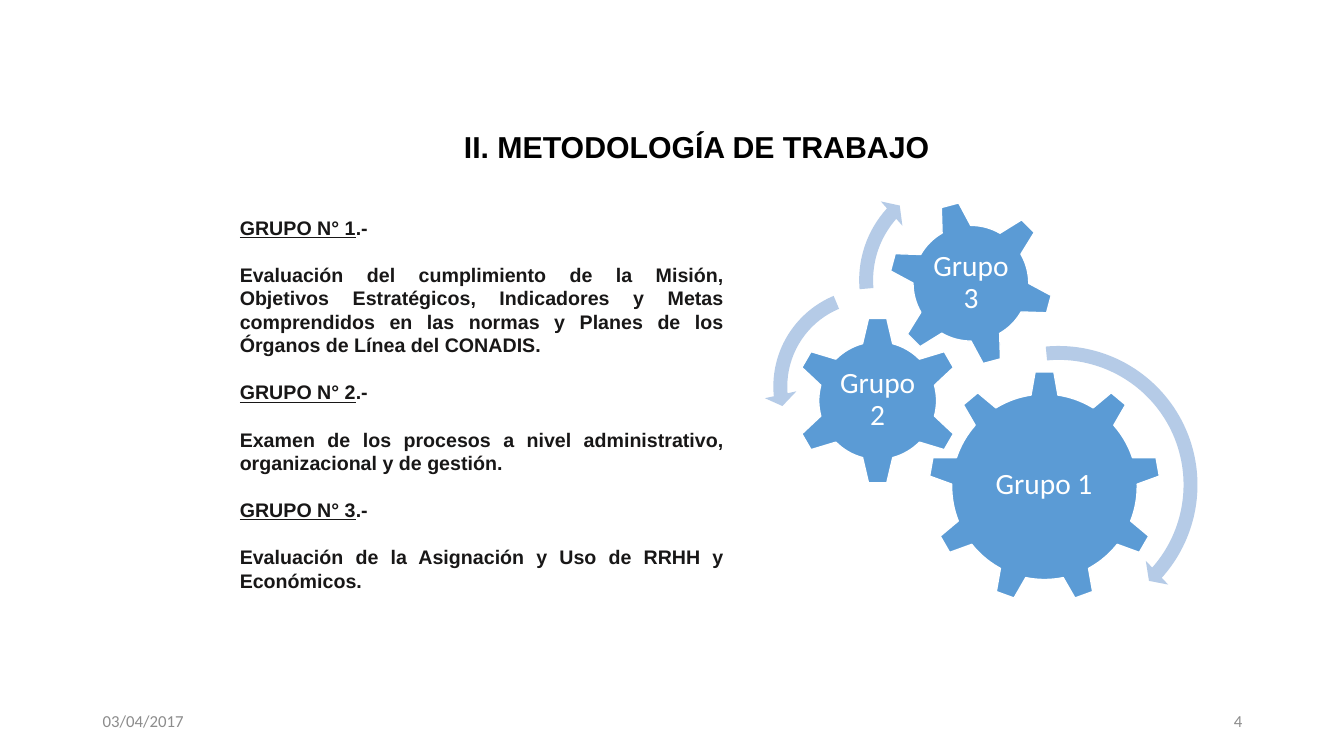
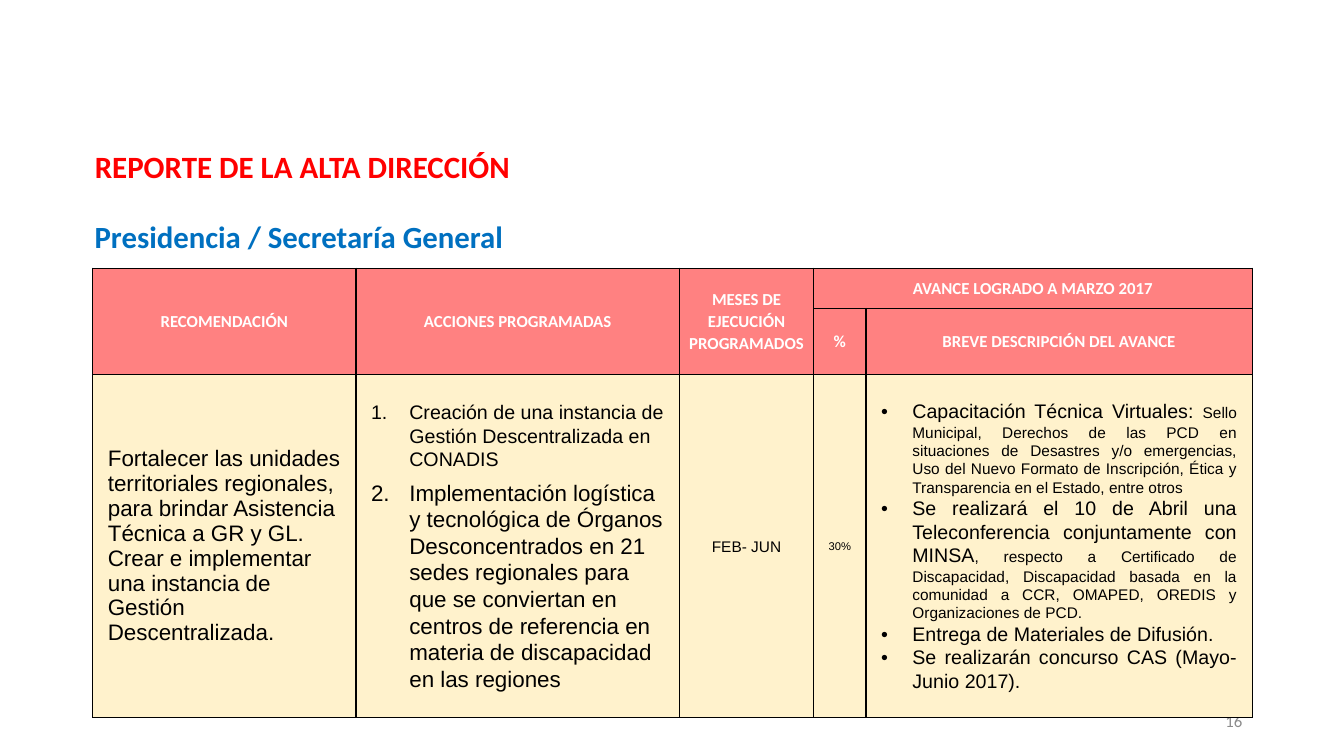
from lxml import etree
from pptx import Presentation
from pptx.dml.color import RGBColor
from pptx.enum.shapes import MSO_SHAPE
from pptx.enum.text import MSO_ANCHOR, MSO_AUTO_SIZE, PP_ALIGN
from pptx.oxml.ns import qn
from pptx.util import Inches, Pt

LEFT, CENTER, RIGHT, JUSTIFY = PP_ALIGN.LEFT, PP_ALIGN.CENTER, PP_ALIGN.RIGHT, PP_ALIGN.JUSTIFY
TOP, MIDDLE = MSO_ANCHOR.TOP, MSO_ANCHOR.MIDDLE
GEAR_6, GEAR_9 = MSO_SHAPE.GEAR_6, MSO_SHAPE.GEAR_9
CLOCKWISE, COUNTERCLOCKWISE = MSO_SHAPE.CIRCULAR_ARROW, MSO_SHAPE.LEFT_CIRCULAR_ARROW

BLACK = RGBColor(0x00, 0x00, 0x00)
WHITE = RGBColor(0xFF, 0xFF, 0xFF)
INK = RGBColor(0x18, 0x17, 0x17)
GRAY = RGBColor(0x8C, 0x8C, 0x8C)
RED = RGBColor(0xFF, 0x00, 0x00)
BLUE = RGBColor(0x00, 0x70, 0xC0)
GEAR_BLUE = RGBColor(0x5B, 0x9B, 0xD5)
ARROW_BLUE = RGBColor(0xB5, 0xCB, 0xE7)
HEADER_PINK = RGBColor(0xFF, 0x81, 0x81)
CREAM = RGBColor(0xFF, 0xF2, 0xCC)


def add_text(frame, *spans, size=12, color=BLACK, font="Calibri", bold=False, align=LEFT,
             line=None, before=0, after=0, bullet=None, indent=0):
    first = not frame.paragraphs[0].runs
    paragraph = frame.paragraphs[0] if first else frame.add_paragraph()
    if bullet:
        properties = paragraph._p.get_or_add_pPr()
        properties.set("marL", str(Inches(indent)))
        properties.set("indent", str(-Inches(indent)))
        if bullet == "1.":
            etree.SubElement(properties, qn("a:buFont"), typeface="+mj-lt")
            etree.SubElement(properties, qn("a:buAutoNum"), type="arabicPeriod")
        else:
            etree.SubElement(properties, qn("a:buFont"), typeface="Arial")
            etree.SubElement(properties, qn("a:buChar"), char=bullet)
    paragraph.alignment = align
    paragraph.line_spacing = line
    paragraph.space_before = Pt(0 if first else before)
    paragraph.space_after = Pt(after)
    for text, changes in spans:
        span = paragraph.add_run()
        span.text = text
        span.font.name = font
        span.font.size = Pt(changes.get("size", size))
        span.font.bold = bold
        span.font.underline = changes.get("underline", False)
        span.font.color.rgb = color


def prepare_box(box, left, top, width, height, anchor=TOP, inset=None):
    box.left, box.top = Inches(left), Inches(top)
    box.width, box.height = Inches(width), Inches(height)
    frame = box.text_frame
    frame.word_wrap = True
    frame.auto_size = MSO_AUTO_SIZE.NONE
    frame.vertical_anchor = anchor
    if inset is not None:
        frame.margin_left = frame.margin_right = Inches(inset)
        frame.margin_top = frame.margin_bottom = Inches(inset)
    return frame


deck = Presentation()
deck.slide_width, deck.slide_height = Inches(13.33), Inches(7.5)
title_only = deck.slide_layouts[5]

pages = []
for number in ("4", "16"):
    page = deck.slides.add_slide(title_only)
    frame = prepare_box(page.shapes.add_textbox(0, 0, 0, 0), 9.42, 6.95, 3, 0.4, MIDDLE)
    add_text(frame, (number, {}), color=GRAY, align=RIGHT)
    pages.append(page)
method_page, report_page = pages

frame = prepare_box(method_page.shapes.title, 1.45, 1.03, 10.92, 0.89, MIDDLE)
add_text(frame, ("II. METODOLOGÍA DE TRABAJO", {}), size=21.6, font="Arial", bold=True,
         align=CENTER, line=0.9)
frame = prepare_box(method_page.shapes.add_textbox(0, 0, 0, 0), 0.92, 6.95, 3, 0.4, MIDDLE)
add_text(frame, ("03/04/2017", {}), color=GRAY)

tasks = [
    "Evaluación del cumplimiento de la Misión, Objetivos Estratégicos, Indicadores y Metas "
    "comprendidos en las normas y Planes de los Órganos de Línea del CONADIS.",
    "Examen de los procesos a nivel administrativo, organizacional y de gestión.",
    "Evaluación de la Asignación y Uso de RRHH y Económicos.",
]
frame = prepare_box(method_page.shapes.add_textbox(0, 0, 0, 0), 2.28, 2.09, 5, 3.87)
body_style = dict(size=14, font="Arial", color=INK, bold=True, align=JUSTIFY, before=16.8)
for number, task in enumerate(tasks, start=1):
    add_text(frame, (f"GRUPO N° {number}", {"underline": True}), (".-", {}), **body_style)
    add_text(frame, (task, {}), **body_style)

gears = [
    ("Grupo 1", GEAR_9, 9.21, 3.68, 2.3, 0, (9.67, 4.22, 1.37, 1.18)),
    ("Grupo 2", GEAR_6, 7.87, 3.14, 1.67, 0, (8.29, 3.56, 0.83, 0.82)),
    ("Grupo 3", GEAR_6, 8.81, 1.99, 1.64, 345, (9.17, 2.35, 0.92, 0.92)),
]
for label, kind, left, top, side, rotation, label_place in gears:
    gear = method_page.shapes.add_shape(kind, Inches(left), Inches(top), Inches(side), Inches(side))
    gear.rotation = rotation
    gear.shadow.inherit = False
    gear.fill.solid()
    gear.fill.fore_color.rgb = GEAR_BLUE
    gear.line.color.rgb = WHITE
    gear.line.width = Pt(1)
    frame = prepare_box(method_page.shapes.add_textbox(0, 0, 0, 0), *label_place, MIDDLE, 0.03)
    add_text(frame, (label, {}), size=21, color=WHITE, align=CENTER, line=0.9)

arrows = [
    (CLOCKWISE, 9.03, 3.34, 2.94, 4.7, (4.98, 41.78, 264.7), 5.5),
    (COUNTERCLOCKWISE, 7.58, 2.77, 2.13, 6.5, (7.17, 174.82, 247.3), 7.5),
    (CLOCKWISE, 8.43, 1.63, 2.3, 6, (6.57, 221.9, 175.14), 7),
]
for kind, left, top, side, thickness, angles, head in arrows:
    arrow = method_page.shapes.add_shape(kind, Inches(left), Inches(top), Inches(side), Inches(side))
    arrow.shadow.inherit = False
    arrow.fill.solid()
    arrow.fill.fore_color.rgb = ARROW_BLUE
    arrow.line.fill.background()
    values = [thickness / 100, *(degrees * 0.6 for degrees in angles), head / 100]
    for index, value in enumerate(values):
        arrow.adjustments[index] = value

frame = prepare_box(report_page.shapes.title, 0.84, 1.41, 7.67, 0.47)
add_text(frame, ("REPORTE DE LA ALTA DIRECCIÓN", {}), size=22.1, color=RED, bold=True)
frame = prepare_box(report_page.shapes.add_textbox(0, 0, 0, 0), 0.84, 2.11, 7.67, 0.47)
add_text(frame, ("Presidencia / Secretaría General", {}), size=22, color=BLUE, bold=True)

column_widths = [2.61, 3.21, 1.33, 0.52, 3.83]
row_heights = [0.4, 0.65, 3.41]
percent_column = 3
table = report_page.shapes.add_table(
    len(row_heights), len(column_widths), Inches(0.92), Inches(2.66),
    Inches(sum(column_widths)), Inches(sum(row_heights))).table
table.first_row = table.horz_banding = False
for column, width in zip(table.columns, column_widths):
    column.width = Inches(width)
for row, height in zip(table.rows, row_heights):
    row.height = Inches(height)

for row in range(len(row_heights)):
    for column in range(len(column_widths)):
        cell = table.cell(row, column)
        header = row < 2
        narrow = header or column == percent_column
        cell.vertical_anchor = MIDDLE
        cell.margin_left = cell.margin_right = Inches(0.08 if narrow else 0.15)
        cell.margin_top = cell.margin_bottom = Inches(0 if header else 0.15)
        properties = cell._tc.get_or_add_tcPr()
        for side in ("lnL", "lnR", "lnT", "lnB"):
            border = etree.SubElement(properties, qn(f"a:{side}"), w=str(Pt(1)))
            fill = etree.SubElement(border, qn("a:solidFill"))
            etree.SubElement(fill, qn("a:srgbClr"), val=str(BLACK))
        cell.fill.solid()
        cell.fill.fore_color.rgb = HEADER_PINK if header else CREAM

for column in range(percent_column):
    table.cell(0, column).merge(table.cell(1, column))
table.cell(0, percent_column).merge(table.cell(0, percent_column + 1))

headings = [
    (0, 0, "RECOMENDACIÓN"),
    (0, 1, "ACCIONES PROGRAMADAS"),
    (0, 2, "MESES DE EJECUCIÓN PROGRAMADOS"),
    (0, 3, "AVANCE LOGRADO A MARZO 2017"),
    (1, 3, "%"),
    (1, 4, "BREVE DESCRIPCIÓN DEL AVANCE"),
]
for row, column, heading in headings:
    add_text(table.cell(row, column).text_frame, (heading, {}), color=WHITE, bold=True,
             align=CENTER, line=1.07)

recommendation, actions, months, percent, progress = (
    table.cell(2, column).text_frame for column in range(len(column_widths)))
for text in (
    "Fortalecer las unidades territoriales regionales, para brindar Asistencia Técnica a GR y GL.",
    "Crear e implementar una instancia de Gestión Descentralizada.",
):
    add_text(recommendation, (text, {}), size=16, font="Arial")

for text, size in (
    ("Creación de una instancia de Gestión Descentralizada en CONADIS", 14),
    ("Implementación logística y tecnológica de Órganos Desconcentrados en 21 sedes regionales "
     "para que se conviertan en centros de referencia en materia de discapacidad en las regiones", 16),
):
    add_text(actions, (text, {}), size=size, font="Arial", line=1.07, after=6,
             bullet="1.", indent=0.38)

add_text(months, ("FEB- JUN", {}), size=11, font="Arial", align=CENTER, line=1.07)
add_text(percent, ("30%", {}), size=8, font="Arial", align=CENTER, line=1.07)

small = {"size": 11}
for spans in (
    [("Capacitación Técnica Virtuales: ", {}),
     ("Sello Municipal, Derechos de las PCD en situaciones de Desastres y/o emergencias, "
      "Uso del Nuevo Formato de Inscripción, Ética y Transparencia en el Estado, entre otros", small)],
    [("Se realizará el 10 de Abril una Teleconferencia conjuntamente con MINSA", {}),
     (", respecto a Certificado de Discapacidad, Discapacidad basada en la comunidad a CCR, "
      "OMAPED, OREDIS y Organizaciones de PCD.", small)],
    [("Entrega de Materiales de Difusión.", {})],
    [("Se realizarán concurso CAS (Mayo-Junio 2017).", {})],
):
    add_text(progress, *spans, size=14, font="Arial", align=JUSTIFY, line=1.07,
             bullet="•", indent=0.31)

deck.save("out.pptx")
